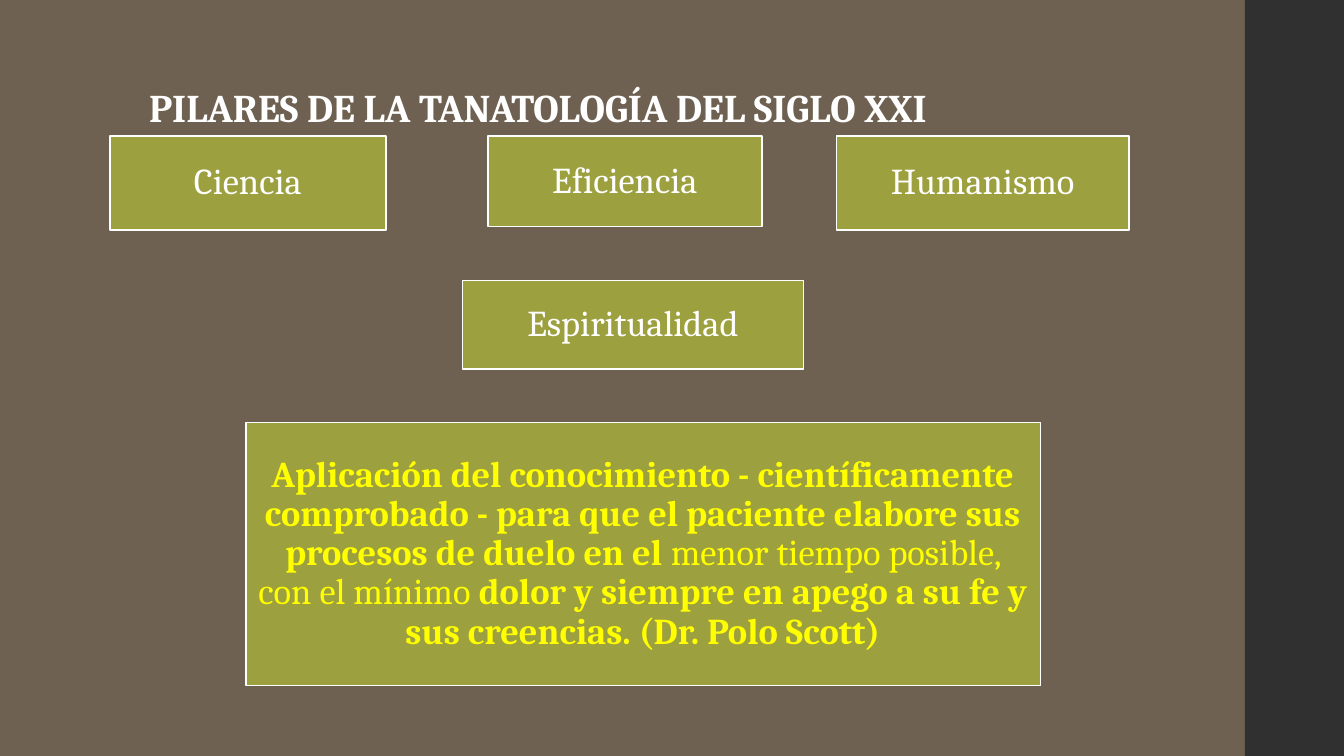
import dataclasses

import pptx
import pptx.dml.color
import pptx.enum.shapes
import pptx.enum.text
import pptx.util

Pt = pptx.util.Pt
ALIGN = pptx.enum.text.PP_ALIGN
ANCHOR = pptx.enum.text.MSO_ANCHOR


@dataclasses.dataclass(frozen=True)
class Theme:
    background: str = "6E6151"
    strip: str = "303030"
    panel: str = "9DA03F"
    light: str = "FFFFFF"
    accent: str = "FFFF00"
    font: str = "Cambria"
    title_size: float = 28
    body_size: float = 26
    outline: float = 1.1
    line_spacing: float = 0.9


def rgb(value):
    return pptx.dml.color.RGBColor.from_string(value)


def apply(target, values):
    for name, value in values.items():
        setattr(target, name, value)


class SlideBuilder:
    def __init__(self, slide, theme):
        self.slide = slide
        self.theme = theme

    def background(self):
        fill = self.slide.background.fill
        fill.solid()
        fill.fore_color.rgb = rgb(self.theme.background)

    def rectangle(self, bounds, color, outlined=False):
        box = self.slide.shapes.add_shape(
            pptx.enum.shapes.MSO_SHAPE.RECTANGLE, *map(Pt, bounds))
        box.shadow.inherit = False
        box.fill.solid()
        box.fill.fore_color.rgb = rgb(color)
        if outlined:
            box.line.color.rgb = rgb(self.theme.light)
            box.line.width = Pt(self.theme.outline)
        else:
            box.line.fill.background()
        return box

    def set_text(self, box, spans, size, color, align, anchor, insets):
        """Fill a box with one paragraph of (text, bold) spans; insets are (sides, top and bottom)."""
        side, end = map(Pt, insets)
        apply(box.text_frame, {
            "word_wrap": True, "vertical_anchor": anchor,
            "margin_left": side, "margin_right": side,
            "margin_top": end, "margin_bottom": end})
        para = box.text_frame.paragraphs[0]
        apply(para, {"alignment": align, "line_spacing": self.theme.line_spacing})
        for text, bold in spans:
            span = para.add_run()
            span.text = text
            apply(span.font, {"name": self.theme.font, "size": Pt(size), "bold": bold})
            span.font.color.rgb = rgb(color)

    def title(self, bounds, text):
        box = self.slide.shapes.add_textbox(*map(Pt, bounds))
        self.set_text(box, [(text, True)], self.theme.title_size, self.theme.light,
                      ALIGN.LEFT, ANCHOR.BOTTOM, (7.2, 3.6))

    def panel(self, bounds, spans, color):
        box = self.rectangle(bounds, self.theme.panel, outlined=True)
        self.set_text(box, spans, self.theme.body_size, color,
                      ALIGN.CENTER, ANCHOR.MIDDLE, (7.8, 7.8))


PILLARS = {
    "Ciencia": (78.5, 97.2, 197.3, 67),
    "Eficiencia": (348.5, 97.2, 195.8, 64.8),
    "Humanismo": (597.6, 97.2, 208.8, 67),
    "Espiritualidad": (330.5, 200.2, 243.4, 63.4),
}
DEFINITION = [
    ("Aplicación del conocimiento - científicamente comprobado - para que "
     "el paciente elabore sus procesos de duelo en el ", True),
    ("menor tiempo posible, con el mínimo ", False),
    ("dolor y siempre en apego a su fe y sus creencias. (Dr. Polo Scott)", True),
]


def main():
    deck = pptx.Presentation()
    apply(deck, {"slide_width": Pt(960), "slide_height": Pt(540)})
    theme = Theme()
    page = SlideBuilder(deck.slides.add_slide(deck.slide_layouts[6]), theme)
    page.background()
    page.rectangle((889.2, 0, 70.8, 540), theme.strip)
    page.title((99.4, 28.8, 763.2, 68.4), "PILARES DE LA TANATOLOGÍA DEL SIGLO XXI")
    for name, bounds in PILLARS.items():
        page.panel(bounds, [(name, False)], theme.light)
    page.panel((175.7, 301.7, 567.4, 187.9), DEFINITION, theme.accent)
    deck.save("out.pptx")


if __name__ == "__main__":
    main()
